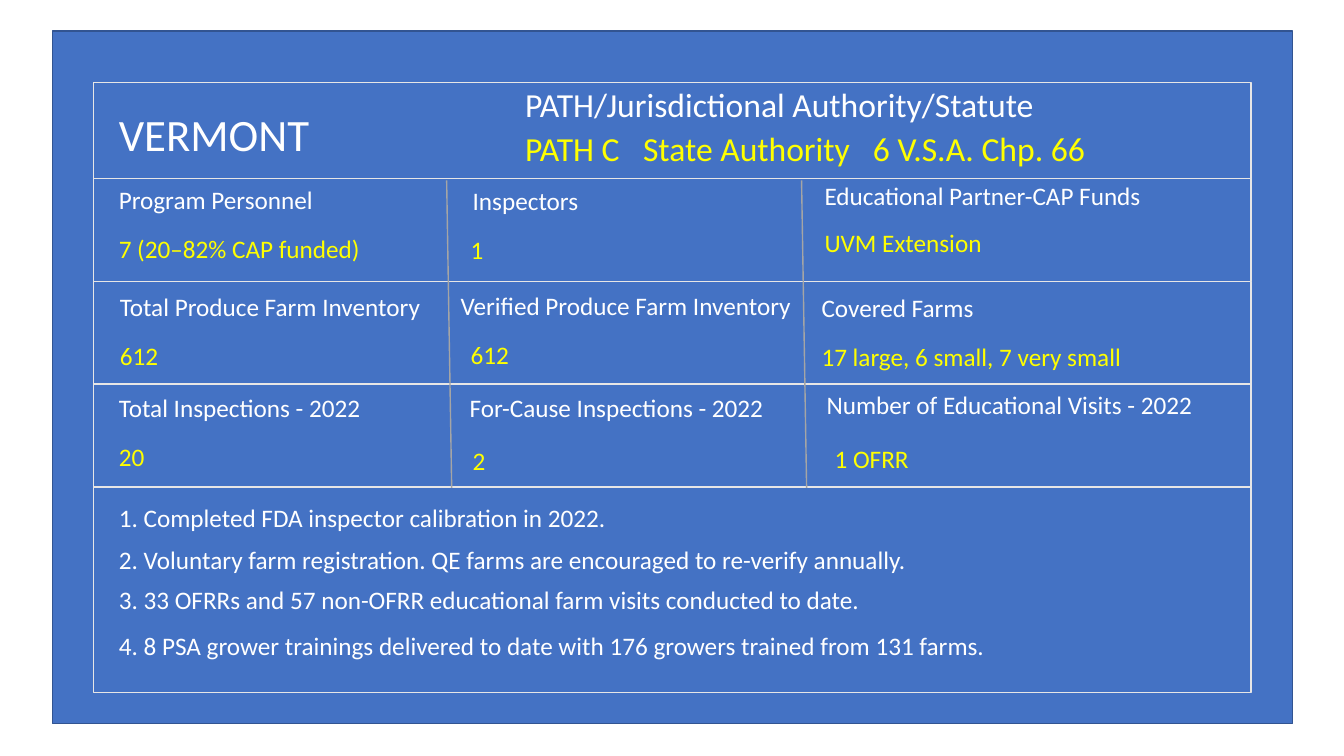
from lxml.etree import SubElement
from pptx import Presentation
from pptx.dml.color import RGBColor
from pptx.enum.shapes import MSO_CONNECTOR as Connector, MSO_SHAPE as Shape
from pptx.enum.text import MSO_AUTO_SIZE as AutoSize, PP_ALIGN as Align
from pptx.oxml.ns import qn
from pptx.util import Inches, Pt

COLORS = {
    "panel": "4472C4",
    "panel_edge": "325491",
    "row_edge": "E7E6E6",
    "divider": "A5A5A5",
    "label": "FFFFFF",
    "value": "FFFF00",
}

ROW_LEFT, ROW_WIDTH, ROW_HEIGHT = 0.93, 11.48, 1.02
FIRST_ROW_TOP = 1.77
NOTES_TOP = FIRST_ROW_TOP + 3 * ROW_HEIGHT

FACTS = [
    ("Program Personnel", 1.08, 1.78, "7 (20–82% CAP funded)", 1.08, 2.27),
    ("Inspectors", 4.59, 1.79, "1", 4.57, 2.28),
    ("Educational Partner-CAP Funds", 8.08, 1.74, "UVM Extension", 8.08, 2.21),
    ("Total Produce Farm Inventory", 1.09, 2.84, "612", 1.09, 3.33),
    ("Verified Produce Farm Inventory", 4.47, 2.83, "612", 4.57, 3.32),
    ("Covered Farms", 8.05, 2.85, "17 large, 6 small, 7 very small", 8.05, 3.34),
    ("Total Inspections - 2022", 1.08, 3.84, "20", 1.08, 4.33),
    ("For-Cause Inspections - 2022", 4.56, 3.84, "2", 4.59, 4.37),
    ("Number of Educational Visits - 2022", 8.1, 3.81, "1 OFRR", 8.18, 4.35),
]

NOTES = [
    (4.93, "1. Completed FDA inspector calibration in 2022."),
    (5.35, "2. Voluntary farm registration. QE farms are encouraged to re-verify annually."),
    (5.75, "3. 33 OFRRs and 57 non-OFRR educational farm visits conducted to date."),
    (6.2, "4. 8 PSA grower trainings delivered to date with 176 growers trained from 131 farms."),
]


def color(name):
    return RGBColor.from_string(COLORS[name])


def apply(target, values):
    for name, value in values.items():
        setattr(target, name, value)


class StateSheet:
    font = "Calibri"
    line_width = Pt(1)

    def __init__(self, deck):
        self.slide = deck.slides.add_slide(deck.slide_layouts[6])

    def stroke(self, line, name):
        line.color.rgb = color(name)
        line.width = self.line_width

    def panel(self, left, top, width, height, edge):
        box = self.slide.shapes.add_shape(
            Shape.RECTANGLE, *map(Inches, (left, top, width, height)))
        box.shadow.inherit = False
        box.fill.solid()
        box.fill.fore_color.rgb = color("panel")
        self.stroke(box.line, edge)

    def divider(self, *ends):
        line = self.slide.shapes.add_connector(Connector.STRAIGHT, *map(Inches, ends))
        self.stroke(line.line, "divider")
        SubElement(line._element.spPr, qn("a:effectLst"))

    def text(self, words, left, top, width=4.67, height=0.42, size=18,
             ink="label", tabs=()):
        box = self.slide.shapes.add_textbox(*map(Inches, (left, top, width, height)))
        apply(box.text_frame, {"word_wrap": True, "auto_size": AutoSize.SHAPE_TO_FIT_TEXT})
        para = box.text_frame.paragraphs[0]
        para.alignment = Align.LEFT
        if tabs:
            stops = SubElement(para._p.get_or_add_pPr(), qn("a:tabLst"))
            for stop in tabs:
                SubElement(stops, qn("a:tab"), pos=str(Inches(stop)), algn="l")
        span = para.add_run()
        span.text = words
        apply(span.font, {"name": self.font, "size": Pt(size)})
        span.font.color.rgb = color(ink)


def main():
    deck = Presentation()
    apply(deck, {"slide_width": Inches(13.33), "slide_height": Inches(7.5)})
    sheet = StateSheet(deck)

    sheet.panel(0.52, 0.31, 12.3, 6.87, "panel_edge")
    sheet.panel(ROW_LEFT, 0.82, ROW_WIDTH, ROW_HEIGHT, "row_edge")
    for row in range(3):
        sheet.panel(ROW_LEFT, FIRST_ROW_TOP + row * ROW_HEIGHT,
                    ROW_WIDTH, ROW_HEIGHT, "row_edge")
    sheet.panel(ROW_LEFT, NOTES_TOP, ROW_WIDTH, 2 * ROW_HEIGHT, "row_edge")

    sheet.text("VERMONT", 1.08, 1.01, 4.87, 0.64, size=32)
    sheet.text("PATH/Jurisdictional Authority/Statute", 5.11, 0.78, 6.82, 0.5, size=24)
    sheet.text("PATH C\tState Authority\t6 V.S.A. Chp. 66", 5.11, 1.22, 7.13, 0.5,
               size=24, ink="value", tabs=(1.17, 3.45))

    for left in (4.43, 7.95):
        sheet.divider(left, 1.79, left + 0.05, 4.84)
    for label, label_left, label_top, value, value_left, value_top in FACTS:
        sheet.text(label, label_left, label_top)
        sheet.text(value, value_left, value_top, ink="value")
    for top, note in NOTES:
        sheet.text(note, 1.08, top, 10.92, 0.4)

    deck.save("out.pptx")


if __name__ == "__main__":
    main()
